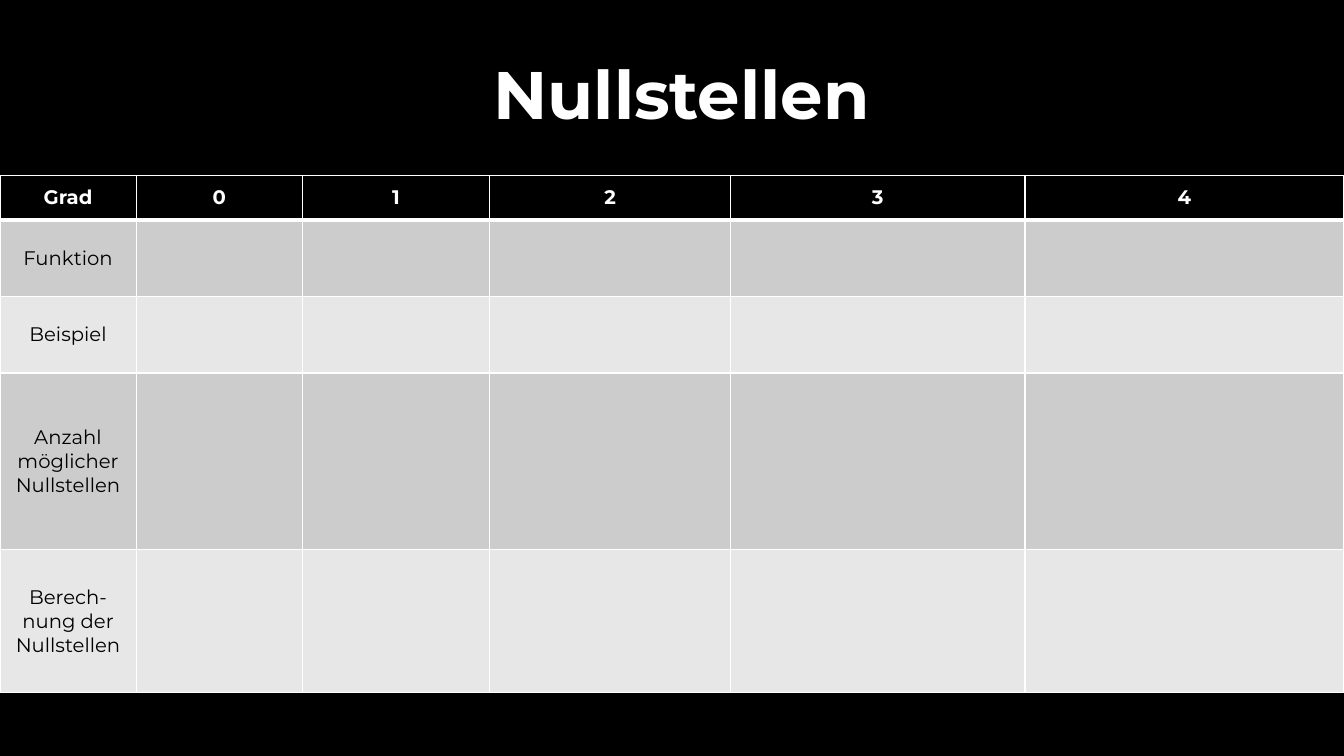
from dataclasses import dataclass

from lxml import etree
from pptx import Presentation
from pptx import util as u
from pptx.dml.color import RGBColor
from pptx.enum import text
from pptx.oxml import ns


@dataclass(frozen=True)
class Theme:
    font: str = "Montserrat"
    black: str = "000000"
    white: str = "FFFFFF"
    bands: tuple = ("CCCCCC", "E7E7E7")
    head: int = 48
    body: int = 14
    thin: int = 1
    thick: int = 3


THEME = Theme()
GRADES = ["Grad", "0", "1", "2", "3", "4"]
LABELS = ["Funktion", "Beispiel", "Anzahl möglicher Nullstellen",
          "Berech-nung der Nullstellen"]
WIDTHS = [3.43, 4.19, 4.72, 6.07, 7.42, 8.04]
HEIGHTS = [1.12, 1.93, 1.93, 4.45, 3.61]


def paint(fill, color):
    fill.solid()
    fill.fore_color.rgb = RGBColor.from_string(color)


def write(frame, words, size, color, bold):
    """Put one centred run into the first paragraph and return the paragraph."""
    para = frame.paragraphs[0]
    para.alignment = text.PP_ALIGN.CENTER
    run = para.add_run()
    run.text = words
    font = run.font
    font.name, font.size, font.bold = THEME.font, u.Pt(size), bold
    font.color.rgb = RGBColor.from_string(color)
    return para


def edge(cell, side, width):
    """Draw a white border; side is L, R, T or B."""
    props = cell._tc.get_or_add_tcPr()
    line = etree.SubElement(props, ns.qn(f"a:ln{side}"), w=str(u.Pt(width)))
    fill = etree.SubElement(line, ns.qn("a:solidFill"))
    etree.SubElement(fill, ns.qn("a:srgbClr"), val=THEME.white)


def add_title(slide, words):
    title = slide.shapes.title
    title.left, title.top = u.Cm(4.27), u.Cm(1.42)
    title.width, title.height = u.Cm(25.81), u.Cm(1.8)
    frame = title.text_frame
    frame.auto_size = text.MSO_AUTO_SIZE.NONE
    frame.vertical_anchor = text.MSO_ANCHOR.TOP
    para = write(frame, words, THEME.head, THEME.white, True)
    para.line_spacing = 0.9
    para.space_before = u.Pt(0)


def style(cell, row):
    """Set the borders, then the fill, of a cell in the given row."""
    top = THEME.thick if row == 1 else THEME.thin
    base = THEME.thick if row == 0 else THEME.thin
    for side, width in zip("LRTB", (THEME.thin, THEME.thin, top, base)):
        edge(cell, side, width)
    paint(cell.fill, THEME.bands[(row - 1) % 2] if row else THEME.black)
    cell.vertical_anchor = text.MSO_ANCHOR.MIDDLE


def add_grid(slide):
    frame = slide.shapes.add_table(
        len(HEIGHTS), len(WIDTHS), u.Cm(0), u.Cm(4.42),
        u.Cm(sum(WIDTHS)), u.Cm(sum(HEIGHTS)))
    grid = frame.table
    for col, width in zip(grid.columns, WIDTHS):
        col.width = u.Cm(width)
    for row, height in enumerate(HEIGHTS):
        grid.rows[row].height = u.Cm(height)
        for col in range(len(WIDTHS)):
            style(grid.cell(row, col), row)
    for col, grade in enumerate(GRADES):
        write(grid.cell(0, col).text_frame, grade,
              THEME.body, THEME.white, True)
    for row, label in enumerate(LABELS, 1):
        write(grid.cell(row, 0).text_frame, label,
              THEME.body, THEME.black, False)


def main():
    deck = Presentation()
    deck.slide_width, deck.slide_height = u.Cm(33.87), u.Cm(19.05)
    slide = deck.slides.add_slide(deck.slide_layouts.get_by_name("Title Only"))
    paint(slide.background.fill, THEME.black)
    add_grid(slide)
    add_title(slide, "Nullstellen")
    deck.save("out.pptx")


if __name__ == "__main__":
    main()
